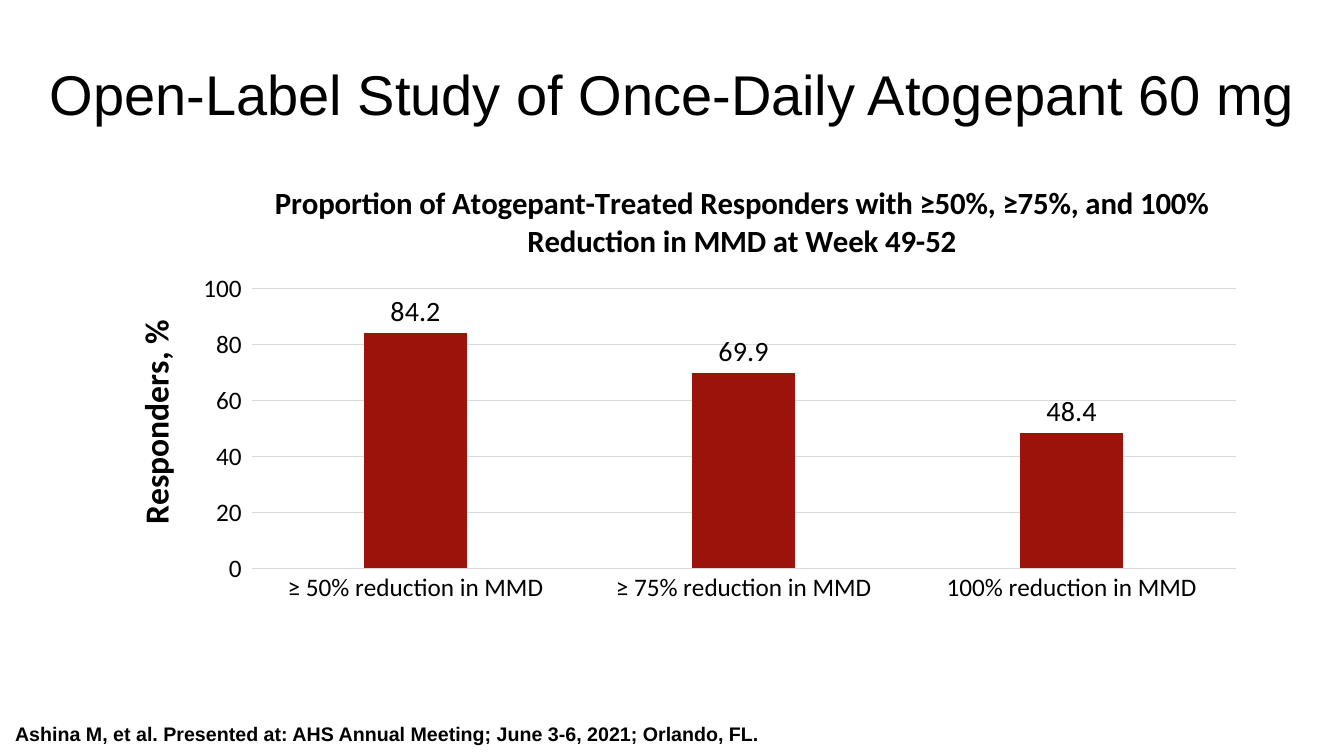
from lxml import etree
from pptx import Presentation
from pptx.chart.data import CategoryChartData
from pptx.dml.color import RGBColor
from pptx.enum.chart import XL_CHART_TYPE, XL_LABEL_POSITION, XL_TICK_MARK
from pptx.enum.text import MSO_ANCHOR, PP_ALIGN
from pptx.oxml.ns import qn
from pptx.util import Inches, Pt

COLUMNS = XL_CHART_TYPE.COLUMN_CLUSTERED
OUTSIDE_END = XL_LABEL_POSITION.OUTSIDE_END
NO_TICK, TICK_OUT = XL_TICK_MARK.NONE, XL_TICK_MARK.OUTSIDE
MIDDLE, BOTTOM = MSO_ANCHOR.MIDDLE, MSO_ANCHOR.BOTTOM
CENTER, LEFT = PP_ALIGN.CENTER, PP_ALIGN.LEFT
BLACK, RED, GRID_GRAY = "000000", "9C130C", "D9D9D9"


def set_font(font, name, size, bold=False, color=BLACK):
    font.name, font.size, font.bold = name, Pt(size), bold
    font.color.rgb = RGBColor.from_string(color)


def place(element, index, **settings):
    """Give a chart part a manual layout, in fractions of the chart."""
    for old_layout in element.findall(qn("c:layout")):
        element.remove(old_layout)
    layout = etree.Element(qn("c:layout"))
    element.insert(index, layout)
    manual = etree.SubElement(layout, qn("c:manualLayout"))
    for tag, value in settings.items():
        etree.SubElement(manual, qn(f"c:{tag}")).set("val", str(value))


deck = Presentation()
deck.slide_width, deck.slide_height = Inches(13.33), Inches(7.5)
page = deck.slides.add_slide(deck.slide_layouts[6])

# Heading and citation: text, top, height, inset, anchor, alignment, size, bold, line spacing
TEXTS = [
    ("Open-Label Study of Once-Daily Atogepant 60 mg",
     0.38, 1.17, 0.05, MIDDLE, CENTER, 40, False, 0.9),
    ("Ashina M, et al. Presented at: AHS Annual Meeting; June 3-6, 2021; Orlando, FL.",
     6.58, 0.92, 0.15, BOTTOM, LEFT, 14, True, 0.85),
]
for text, top, height, inset, anchor, alignment, size, bold, spacing in TEXTS:
    box = page.shapes.add_textbox(0, Inches(top), deck.slide_width, Inches(height))
    frame = box.text_frame
    frame.word_wrap = True
    frame.vertical_anchor = anchor
    frame.margin_left = frame.margin_right = Inches(inset)
    frame.margin_top = frame.margin_bottom = Inches(inset)
    para = frame.paragraphs[0]
    para.alignment, para.line_spacing = alignment, spacing
    span = para.add_run()
    span.text = text
    set_font(span.font, "Arial", size, bold)

# Responder chart
responders = CategoryChartData()
responders.categories = ["≥ 50% reduction in MMD", "≥ 75% reduction in MMD", "100% reduction in MMD"]
responders.add_series("Series 1", [84.2, 69.9, 48.4])
chart = page.shapes.add_chart(
    COLUMNS, Inches(0.79), Inches(1.64), Inches(11.76), Inches(5.09), responders).chart
chart.has_legend = False
set_font(chart.font, "Calibri", 10)

plot = chart.plots[0]
plot.gap_width, plot.overlap, plot.vary_by_categories = 219, -27, False
bars = plot.series[0]
bars.format.fill.solid()
bars.format.fill.fore_color.rgb = RGBColor.from_string(RED)
labels = bars.data_labels
labels.show_value, labels.position = True, OUTSIDE_END
set_font(labels.font, "Calibri", 20)

# Axes
category_axis, value_axis = chart.category_axis, chart.value_axis
for axis, tick in ((category_axis, NO_TICK), (value_axis, TICK_OUT)):
    axis.major_tick_mark, axis.minor_tick_mark = tick, NO_TICK
    axis.format.line.fill.background()
    set_font(axis.tick_labels.font, "Calibri", 18)
value_axis.minimum_scale, value_axis.maximum_scale = 0, 100
value_axis.major_unit = 20
value_axis.has_major_gridlines = True
grid_line = value_axis.major_gridlines.format.line
grid_line.color.rgb = RGBColor.from_string(GRID_GRAY)
grid_line.width = Pt(0.75)

# Chart and axis titles
chart.has_title = True
value_axis.has_title = True
TITLES = [
    (chart.chart_title,
     "Proportion of Atogepant-Treated Responders with ≥50%, ≥75%, and 100% Reduction in MMD at Week 49-52",
     22, 0, 0.16, 0.02),
    (value_axis.axis_title, "Responders, %", 24, -90, 0.04, 0.29),
]
for title, text, size, degrees, left, top in TITLES:
    frame = title.text_frame
    span = frame.paragraphs[0].add_run()
    span.text = text
    set_font(span.font, "Calibri", size, True)
    body = frame._txBody.find(qn("a:bodyPr"))
    body.set("rot", str(degrees * 60000))
    body.set("vert", "horz")
    place(title._element, 1, xMode="edge", yMode="edge", x=left, y=top)
chart.chart_title.include_in_layout = False

plot_area = chart._chartSpace.chart.plotArea
place(plot_area, 0, layoutTarget="inner", xMode="edge", yMode="edge",
      x=0.145, y=0.24, w=0.83, h=0.546)

deck.save("out.pptx")
